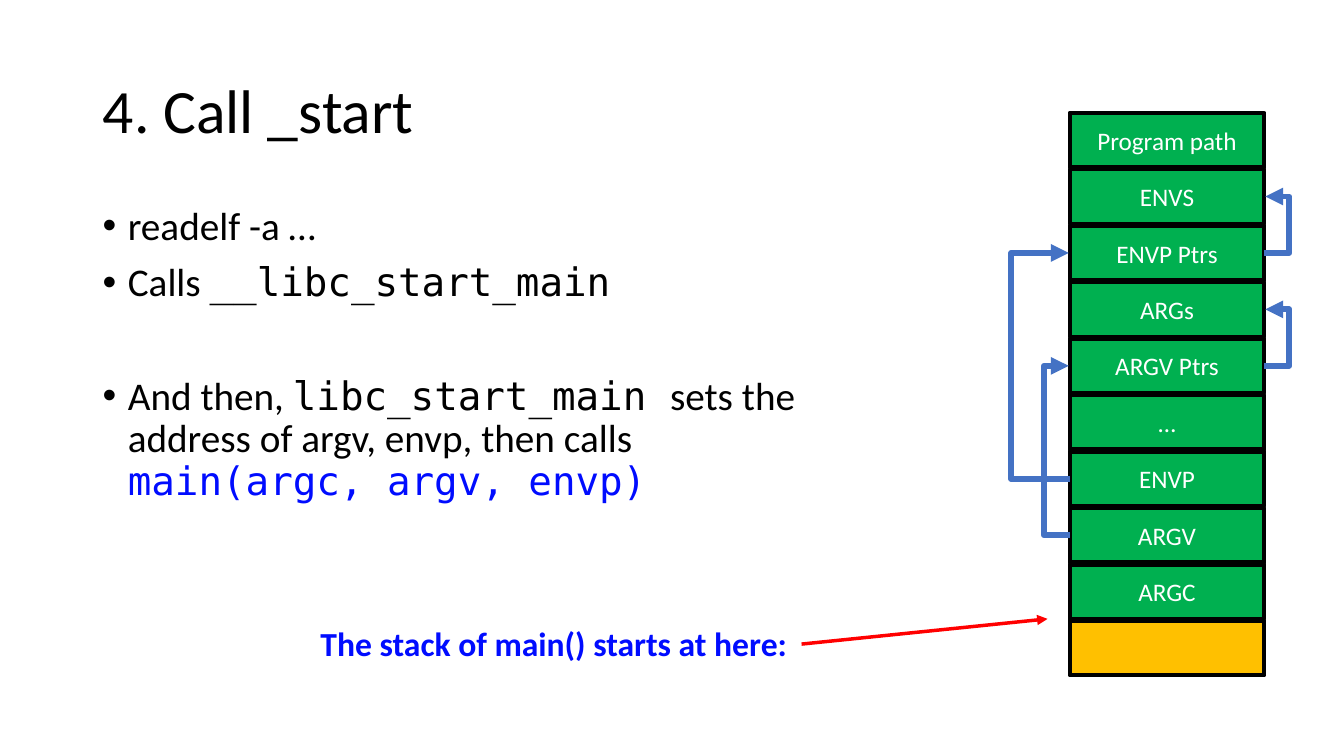
from dataclasses import dataclass

from lxml import etree
from pptx import Presentation
from pptx import util as u
from pptx.dml.color import RGBColor
from pptx.enum import shapes, text
from pptx.oxml.ns import qn


@dataclass(frozen=True)
class Theme:
    black: str = "000000"
    white: str = "FFFFFF"
    blue: str = "000CFF"
    green: str = "00B050"
    amber: str = "FFC000"
    link: str = "4472C4"
    red: str = "FF0000"
    font: str = "Calibri"
    code: str = "DejaVu Sans Mono"
    title: int = 44
    body: int = 28
    label: int = 24
    cell: int = 18


theme = Theme()


def write(paragraph, words, size, color=theme.black, font=theme.font, bold=False):
    run = paragraph.add_run()
    run.text = words
    run.font.size = u.Pt(size)
    run.font.name = font
    run.font.bold = bold
    run.font.color.rgb = RGBColor.from_string(color)


def add_arrow(kind, begin, end, color, width):
    arrow = slide.shapes.add_connector(kind, *map(u.Inches, begin + end))
    arrow.line.color.rgb = RGBColor.from_string(color)
    arrow.line.width = u.Pt(width)
    properties = arrow._element.spPr
    etree.SubElement(properties.find(qn("a:ln")), qn("a:tailEnd"), type="triangle")
    etree.SubElement(properties, qn("a:effectLst"))
    return arrow


presentation = Presentation()
presentation.slide_width = u.Inches(13.33)
presentation.slide_height = u.Inches(7.5)
slide = presentation.slides.add_slide(presentation.slide_layouts[5])

title = slide.shapes.title
title.left, title.top = u.Inches(0.92), u.Inches(0.4)
title.width, title.height = u.Inches(11.5), u.Inches(1.45)
title.text_frame.vertical_anchor = text.MSO_ANCHOR.MIDDLE
heading = title.text_frame.paragraphs[0]
heading.alignment = text.PP_ALIGN.LEFT
heading.line_spacing = 0.9
write(heading, "4. Call _start", theme.title)

bullets = [
    (10, [("readelf -a …", {})]),
    (10, [("Calls ", {}), ("__libc_start_main", {"font": theme.code})]),
    (51, [
        ("And then, ", {}),
        ("libc_start_main ", {"font": theme.code}),
        ("sets the address of argv, envp, then calls ", {}),
        ("main(argc, argv, envp)", {"font": theme.code, "color": theme.blue}),
    ]),
]
body = slide.shapes.add_textbox(*map(u.Inches, (0.92, 2, 7.32, 4.76))).text_frame
body.word_wrap = True
for index, (gap, runs) in enumerate(bullets):
    paragraph = body.add_paragraph() if index else body.paragraphs[0]
    paragraph.line_spacing = 0.9
    paragraph.space_before = u.Pt(gap)
    properties = paragraph._p.get_or_add_pPr()
    properties.set("marL", str(u.Inches(0.25)))
    properties.set("indent", str(u.Inches(-0.25)))
    etree.SubElement(properties, qn("a:buFont"), typeface="Arial")
    etree.SubElement(properties, qn("a:buChar"), char="•")
    for words, style in runs:
        write(paragraph, words, theme.body, **style)

stack = ["Program path", "ENVS", "ENVP Ptrs", "ARGs", "ARGV Ptrs",
         "…", "ENVP", "ARGV", "ARGC", ""]
left, top, width, height, pitch = 10.61, 1.12, 1.93, 0.54, 0.56
middles = {}
for row, name in enumerate(stack):
    y = top + row * pitch
    middles[name] = y + height / 2
    cell = slide.shapes.add_shape(
        shapes.MSO_SHAPE.RECTANGLE, *map(u.Inches, (left, y, width, height)))
    cell.shadow.inherit = False
    cell.fill.solid()
    cell.fill.fore_color.rgb = RGBColor.from_string(theme.green if name else theme.amber)
    cell.line.color.rgb = RGBColor.from_string(theme.black)
    cell.line.width = u.Pt(3)
    if name:
        cell.text_frame.vertical_anchor = text.MSO_ANCHOR.MIDDLE
        paragraph = cell.text_frame.paragraphs[0]
        paragraph.alignment = text.PP_ALIGN.CENTER
        write(paragraph, name, theme.cell, color=theme.white)

pointers = [
    ("ARGV", "ARGV Ptrs", left, -0.26),
    ("ARGV Ptrs", "ARGs", left + width, 0.25),
    ("ENVP", "ENVP Ptrs", left, -0.59),
    ("ENVP Ptrs", "ENVS", left + width, 0.25),
]
for source, target, side, reach in pointers:
    step = 0.01 if reach > 0 else -0.01
    pointer = add_arrow(shapes.MSO_CONNECTOR.ELBOW, (side, middles[source]),
                        (side + step, middles[target]), theme.link, 4.25)
    pointer.adjustments = None
    guides = pointer._element.spPr.find(qn("a:prstGeom")).get_or_add_avLst()
    etree.SubElement(guides, qn("a:gd"), name="adj1",
                     fmla=f"val {round(reach / step * 100000)}")

add_arrow(shapes.MSO_CONNECTOR.STRAIGHT, (7.95, 6.39), (10.39, 6.14), theme.red, 2.5)

label = slide.shapes.add_textbox(*map(u.Inches, (3.08, 6.13, 5.27, 0.5))).text_frame
label.word_wrap = True
write(label.paragraphs[0], "The stack of main() starts at here:",
      theme.label, color=theme.blue, bold=True)

presentation.save("out.pptx")
